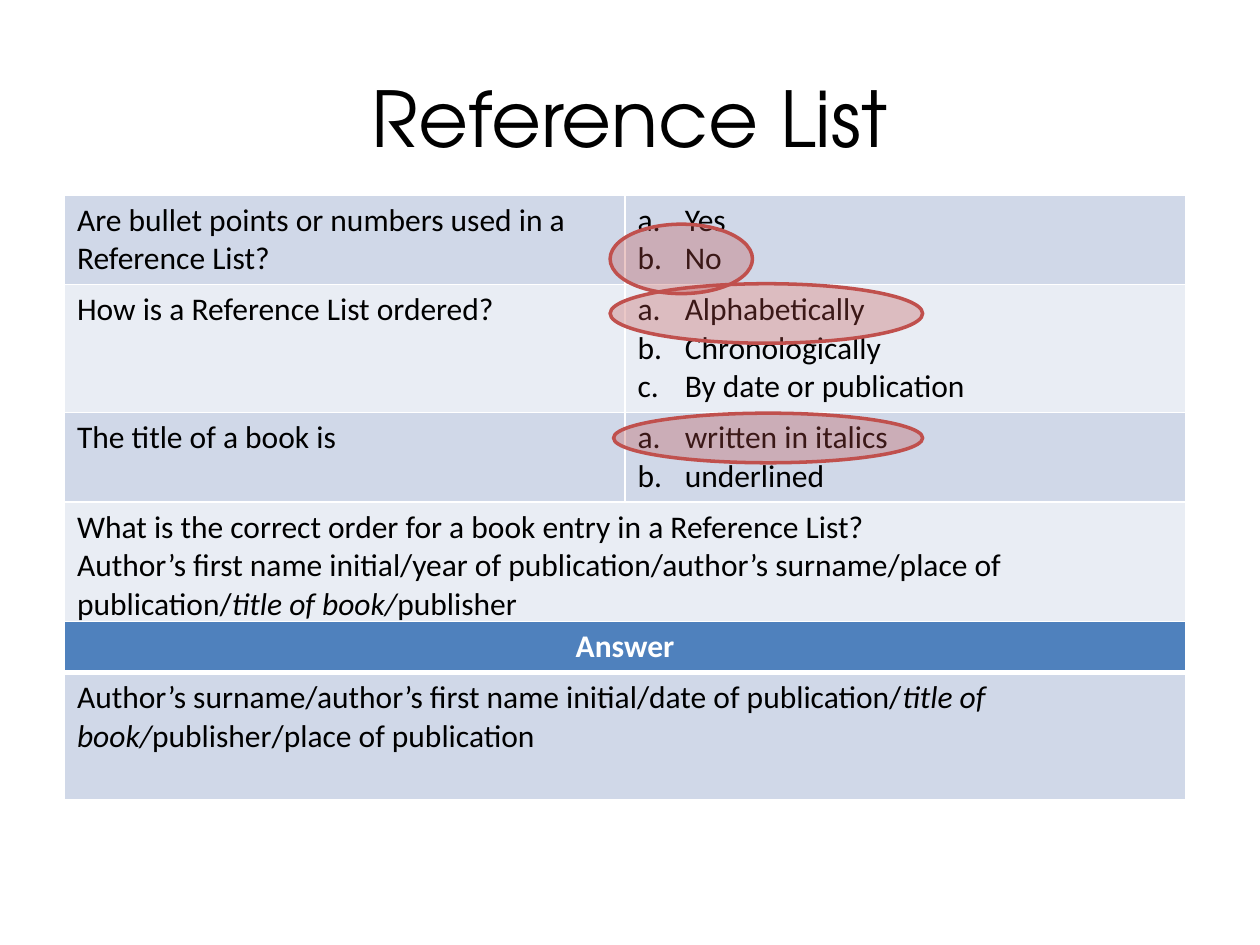
from lxml import etree
from pptx import Presentation
from pptx import util as u
from pptx.dml.color import RGBColor
from pptx.enum import shapes, text
from pptx.oxml.ns import qn

BLACK = RGBColor(0x00, 0x00, 0x00)
WHITE = RGBColor(0xFF, 0xFF, 0xFF)
BLUE = RGBColor(0x4F, 0x81, 0xBD)
BAND = RGBColor(0xD0, 0xD8, 0xE8)
PALE = RGBColor(0xE9, 0xED, 0xF4)
RED = RGBColor(0xC0, 0x50, 0x4D)


class QuizSlide:
    title_font = "TeX Gyre Adventor"
    body_font = "Calibri"
    body_size = u.Pt(18)
    indent = u.Cm(0.95)

    def __init__(self, prs):
        self.s = prs.slides.add_slide(prs.slide_layouts[5])

    def title(self, words, x, y, w, h):
        sp = self.s.shapes.title
        sp.left, sp.top, sp.width, sp.height = map(u.Cm, (x, y, w, h))
        tf = sp.text_frame
        tf.vertical_anchor = text.MSO_ANCHOR.MIDDLE
        p = tf.paragraphs[0]
        p.alignment = text.PP_ALIGN.CENTER
        r = p.add_run()
        r.text = words
        r.font.name, r.font.size = self.title_font, u.Pt(44)
        r.font.color.rgb = BLACK

    def table(self, x, y, widths, heights):
        frame = self.s.shapes.add_table(
            len(heights), len(widths), u.Cm(x), u.Cm(y),
            u.Cm(sum(widths)), u.Cm(sum(heights)))
        table = frame.table
        table.first_row = table.horz_banding = False
        for column, width in zip(table.columns, widths):
            column.width = u.Cm(width)
        for row, height in zip(table.rows, heights):
            row.height = u.Cm(height)
        return table

    def borders(self, cell, bottom):
        tc_pr = cell._tc.get_or_add_tcPr()
        for side, points in zip("LRTB", (1, 1, 1, bottom)):
            ln = etree.SubElement(tc_pr, qn(f"a:ln{side}"), w=str(u.Pt(points)))
            fill = etree.SubElement(ln, qn("a:solidFill"))
            etree.SubElement(fill, qn("a:srgbClr"), val=str(WHITE))

    def cell(self, cell, fill, paragraphs, lettered=False, heading=False, bottom=1):
        self.borders(cell, bottom)
        cell.fill.solid()
        cell.fill.fore_color.rgb = fill
        tf = cell.text_frame
        for i, runs in enumerate(paragraphs):
            p = tf.add_paragraph() if i else tf.paragraphs[0]
            if heading:
                p.alignment = text.PP_ALIGN.CENTER
            if lettered:
                p_pr = p._p.get_or_add_pPr()
                p_pr.set("marL", str(self.indent))
                p_pr.set("indent", str(-self.indent))
                etree.SubElement(p_pr, qn("a:buFont"), typeface="+mj-lt")
                etree.SubElement(p_pr, qn("a:buAutoNum"), type="alphaLcPeriod")
            for words, italic in runs:
                r = p.add_run()
                r.text = words
                r.font.name, r.font.size = self.body_font, self.body_size
                r.font.bold, r.font.italic = heading, italic
                r.font.color.rgb = WHITE if heading else BLACK

    def ring(self, x, y, w, h):
        sp = self.s.shapes.add_shape(
            shapes.MSO_SHAPE.OVAL, *map(u.Cm, (x, y, w, h)))
        sp.shadow.inherit = False
        sp.fill.solid()
        sp.fill.fore_color.rgb = RED
        colour = sp._element.spPr.find(qn("a:solidFill"))[0]
        etree.SubElement(colour, qn("a:alpha"), val="31000")
        sp.line.color.rgb = RED
        sp.line.width = u.Pt(2)


def plain(*lines):
    return [[(line, False)] for line in lines]


QUESTIONS = [
    ("Are bullet points or numbers used in a Reference List?", ("Yes", "No")),
    ("How is a Reference List ordered?",
     ("Alphabetically", "Chronologically", "By date or publication")),
    ("The title of a book is", ("written in italics", "underlined")),
]
ORDER_QUESTION = plain(
    "What is the correct order for a book entry in a Reference List?") + [[
        ("Author’s first name initial/year of publication/author’s surname/"
         "place of publication/", False),
        ("title of book/", True),
        ("publisher", False)]]
ORDER_ANSWER = [[
    ("Author’s surname/author’s first name initial/date of publication/", False),
    ("title of book/", True),
    ("publisher/place of publication", False)]]
RINGS = [
    (12.3, 4.52, 2.87, 1.4),
    (12.3, 5.72, 6.3, 1.2),
    (12.37, 8.33, 6.23, 1),
]


def main():
    prs = Presentation()
    prs.slide_width, prs.slide_height = u.Cm(25.4), u.Cm(19.05)
    quiz = QuizSlide(prs)
    quiz.title("Reference List", 1.27, 0.76, 22.86, 3.18)

    table = quiz.table(1.3, 3.93, [11.3, 11.3], [1.8, 2.58, 1.8, 2.58])
    for i, (question, choices) in enumerate(QUESTIONS):
        fill = PALE if i % 2 else BAND
        quiz.cell(table.cell(i, 0), fill, plain(question))
        quiz.cell(table.cell(i, 1), fill, plain(*choices), lettered=True)
    table.cell(3, 0).merge(table.cell(3, 1))
    quiz.cell(table.cell(3, 0), PALE, ORDER_QUESTION)

    table = quiz.table(1.3, 12.53, [22.6], [1.03, 2.57])
    quiz.cell(table.cell(0, 0), BLUE, plain("Answer"), heading=True, bottom=3)
    quiz.cell(table.cell(1, 0), BAND, ORDER_ANSWER)

    for box in RINGS:
        quiz.ring(*box)
    prs.save("out.pptx")


if __name__ == "__main__":
    main()
